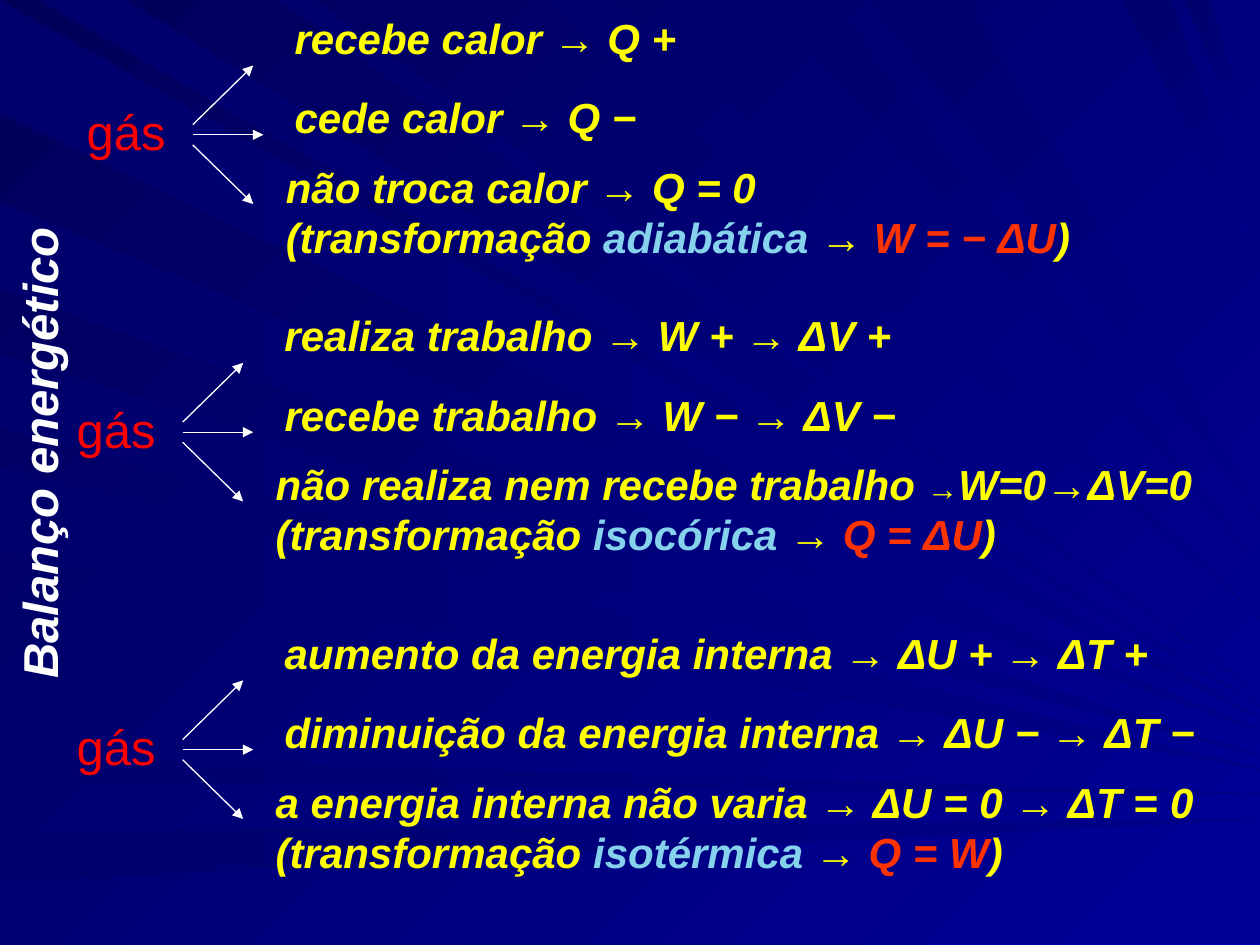
"""Build the slide on the energy balance of a gas."""
from lxml.etree import SubElement
from pptx import Presentation
from pptx.dml.color import RGBColor
from pptx.enum.shapes import MSO_CONNECTOR
from pptx.enum.text import MSO_ANCHOR, PP_ALIGN
from pptx.oxml.ns import qn
from pptx.util import Inches, Pt

INK = {"gas": "FF0000", "text": "FFFF00", "kind": "86D1EC",
       "law": "FF3300", "white": "FFFFFF", "night": "000058",
       "blue": "000099", "dark": "00006D", "mid": "000088"}
WIDE, HIGH = 10, 7.5
KIND, LAW = {"ink": "kind"}, {"ink": "law"}

CASES = [
    (0.59, 0.76, [
        (5.67, ["recebe calor → Q +"]),
        (4.49, ["cede calor → Q −"]),
        (7.24, ["não troca calor → Q = 0",
                [("(transformação", {}), (" adiabática", KIND), (" → ", {}),
                 ("W = − ΔU", LAW), (")", {})]])]),
    (0.51, 3.12, [
        (5.67, ["realiza trabalho → W + → ΔV +"]),
        (5.99, ["recebe trabalho → W − → ΔV −"]),
        (8.27, [[("não realiza nem recebe trabalho ", {}), ("→", {"size": 18}),
                 ("W=0→ΔV=0", {})],
                [("(transformação ", {}), ("isocórica ", KIND), ("→ ", {}),
                 ("Q = ΔU", LAW), (")", {})]])]),
    (0.51, 5.64, [
        (7.52, ["aumento da energia interna → ΔU + → ΔT +"]),
        (8.35, ["diminuição da energia interna → ΔU − → ΔT −"]),
        (7.60, [[("a energia interna não varia → ΔU = 0 → ΔT", {}),
                 (" =", {"italic": False}), (" 0", {})],
                [("(transformação ", {}), ("isotérmica", KIND), (" → ", {}),
                 ("Q = W", LAW), (")", {})]])]),
]
SPOTS = [(1.65, -0.71, 0.5), (1.65, -0.08, 0.5), (1.58, 0.47, 0.9)]
ARROWS = [(-0.08, 1.42, -0.55), (0, 1.5, 0), (0.08, 1.42, 0.55)]

SIDE_RAYS = [(0, 0.9, 5.7), (1.6, 2.3, 5.8), (2.8, 3.4, 6),
             (3.7, 4.4, 6.1), (6, 6.2, 6.3), (6.6, 7, 6.5)]
TOP_RAYS = [(0.3, 1, 5.6), (2.2, 2.5, 5.5), (4.3, 4.9, 4.9),
            (6.1, 6.6, 4.5), (6.9, 7.7, 4.1), (8.9, 9.3, 2.1), (9.4, 9.6, 1.4)]


def paint(fill, first, last, angle):
    fill.gradient()
    fill.gradient_angle = (360 - angle) % 360
    for stop, name in zip(fill.gradient_stops, (first, last)):
        stop.color.rgb = RGBColor.from_string(INK[name])


def draw_ray(slide, start, end, tip, angle):
    pen = slide.shapes.build_freeform(*map(Inches, start))
    pen.add_line_segments([tuple(map(Inches, spot)) for spot in (end, (WIDE, tip))])
    ray = pen.convert_to_shape()
    ray.shadow.inherit = False
    ray.line.fill.background()
    paint(ray.fill, "dark", "mid", angle)


def draw_arrow(slide, *ends):
    arrow = slide.shapes.add_connector(MSO_CONNECTOR.STRAIGHT, *map(Inches, ends))
    arrow.line.color.rgb = RGBColor.from_string(INK["white"])
    arrow.line.width = Pt(0.75)
    SubElement(arrow.line._get_or_add_ln(), qn("a:tailEnd"), type="triangle")
    SubElement(arrow._element.spPr, qn("a:effectLst"))


def place(shape, *area):
    shape.left, shape.top, shape.width, shape.height = map(Inches, area)


def write(shape, lines, size=24, ink="text", bold=True, italic=True):
    frame = shape.text_frame
    frame.word_wrap = True
    frame.vertical_anchor = MSO_ANCHOR.TOP
    for num, line in enumerate(lines):
        para = frame.add_paragraph() if num else frame.paragraphs[0]
        para.alignment = PP_ALIGN.LEFT
        para.space_before = Pt(0)
        for text, extra in [(line, {})] if isinstance(line, str) else line:
            run = para.add_run()
            run.text = text
            font = run.font
            font.name = "Arial"
            font.size = Pt(extra.get("size", size))
            font.bold = bold
            font.italic = extra.get("italic", italic)
            font.color.rgb = RGBColor.from_string(INK[extra.get("ink", ink)])


def add_text(slide, area, lines, **look):
    write(slide.shapes.add_textbox(*map(Inches, area)), lines, **look)


def main():
    deck = Presentation()
    deck.slide_width, deck.slide_height = Inches(WIDE), Inches(HIGH)
    slide = deck.slides.add_slide(deck.slide_layouts[5])
    paint(slide.background.fill, "night", "blue", 45)
    for low, high, tip in SIDE_RAYS:
        draw_ray(slide, (0, low), (0, high), tip, 0)
    for low, high, tip in TOP_RAYS:
        draw_ray(slide, (low, 0), (high, 0), tip, 45)
    for left, top, notes in CASES:
        add_text(slide, (left, top, 0.87, 0.57), ["gás"],
                 size=28, ink="gas", bold=False, italic=False)
        mid = top + 0.31
        for rise, reach, drop in ARROWS:
            draw_arrow(slide, left + 0.94, mid + rise, left + reach, mid + drop)
        for (dx, dy, high), (wide, lines) in zip(SPOTS, notes):
            add_text(slide, (left + dx, top + dy, wide, high), lines)
    title = slide.shapes.title
    place(title, -1.74, 3.15, 4.1, 0.57)
    title.rotation = 270
    write(title, ["Balanço energético"], size=28, ink="white")
    slide.shapes._spTree.append(title._element)
    deck.save("out.pptx")


if __name__ == "__main__":
    main()
